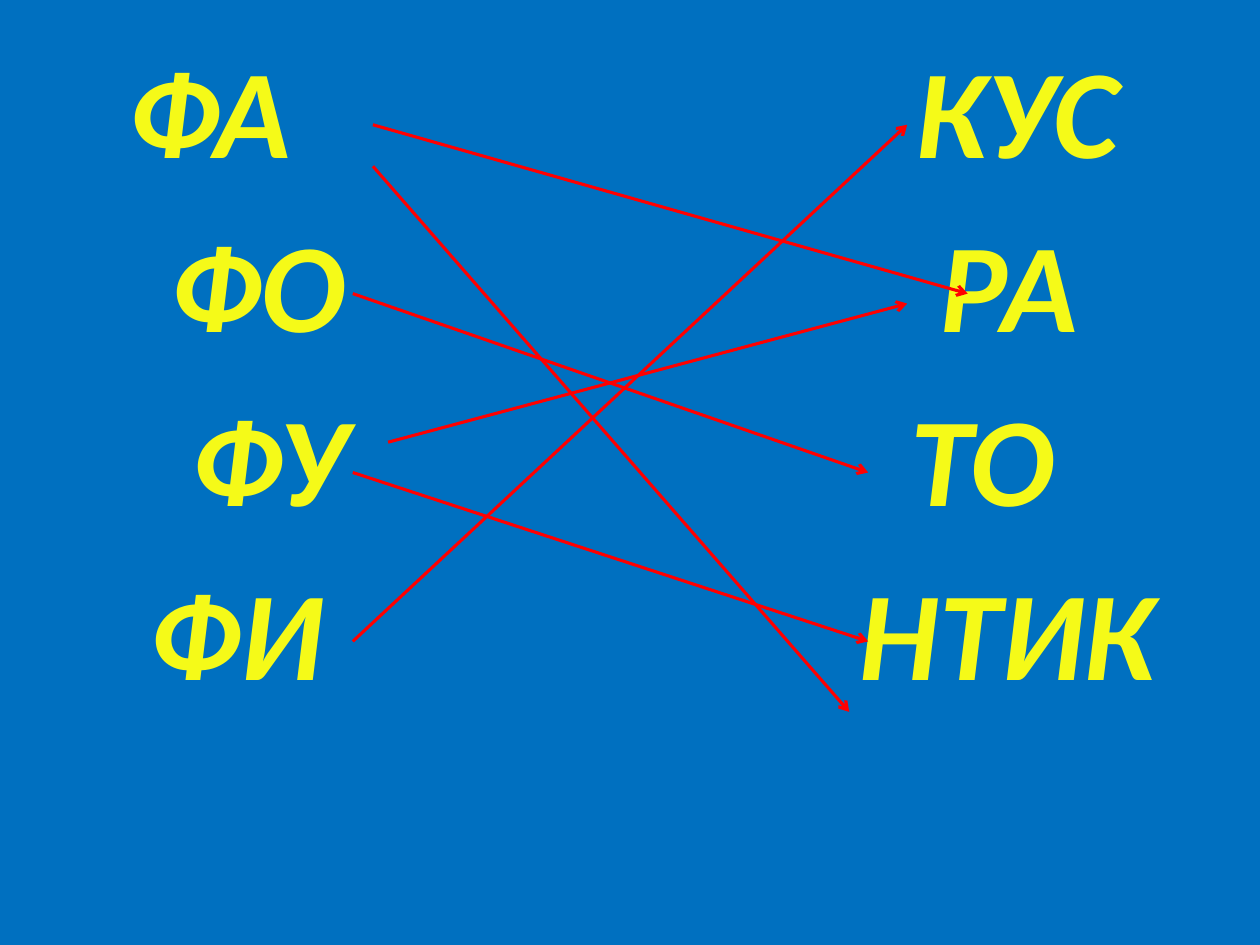
import pptx
import pptx.dml.color
import pptx.enum.shapes
import pptx.enum.text
import pptx.util
from lxml import etree

Pt = pptx.util.Pt
INK = {"back": "0070C0", "text": "F5FA18", "line": "FF0000"}
LEFT = [("ФА", 41), ("ФО", 65), ("ФУ", 77), ("ФИ", 53)]
RIGHT = [("КУС", 71), ("РА", 85), ("ТО", 68), ("НТИК", 39)]
LINKS = [
    ((201.6, 366.5), (518.4, 71.3)),
    ((201.6, 167.8), (496.1, 270)),
    ((221.8, 252.7), (518.4, 173.5)),
    ((201.6, 270), (496.1, 366.5)),
    ((213.1, 95), (485.3, 406.8)),
    ((213.1, 71.3), (553, 167.8)),
]


def rgb(name):
    return pptx.dml.color.RGBColor.from_string(INK[name])


def write(para, text, size=72, color="text", indent=0, gap=0):
    run = para.add_run()
    run.text = text
    font = run.font
    font.name, font.size = "Calibri", Pt(size)
    font.bold = font.italic = True
    font.color.rgb = rgb(color)
    para.alignment = pptx.enum.text.PP_ALIGN.LEFT
    para.space_before = Pt(gap)
    props = para._p.get_or_add_pPr()
    props.set("marL", str(Pt(indent)))
    props.set("indent", "0")
    etree.SubElement(props, pptx.oxml.ns.qn("a:buNone"))


def column(holder, words, box):
    """Fill a placeholder with syllables, each at its own indent."""
    holder.left, holder.top, holder.width, holder.height = map(Pt, box)
    frame = holder.text_frame
    frame.auto_size = pptx.enum.text.MSO_AUTO_SIZE.NONE
    frame.word_wrap = True
    for i, (word, indent) in enumerate(words):
        para = frame.add_paragraph() if i else frame.paragraphs[0]
        write(para, word, indent=indent, gap=13)


def arrow(slide, start, end):
    line = slide.shapes.add_connector(
        pptx.enum.shapes.MSO_CONNECTOR.STRAIGHT, *map(Pt, start + end))
    line.line.color.rgb = rgb("line")
    line.line.width = Pt(1.75)
    qn = pptx.oxml.ns.qn
    etree.SubElement(line.line._get_or_add_ln(), qn("a:tailEnd"), type="arrow")
    etree.SubElement(line._element.spPr, qn("a:effectLst"))


def main():
    deck = pptx.Presentation()
    deck.slide_width, deck.slide_height = Pt(720), Pt(540)
    slide = deck.slides.add_slide(deck.slide_layouts.get_by_name("Two Content"))
    slide.background.fill.solid()
    slide.background.fill.fore_color.rgb = rgb("back")
    title, left, right = list(slide.placeholders)[:3]
    title._element.getparent().remove(title._element)
    column(left, LEFT, (25.2, 15, 420, 499))
    column(right, RIGHT, (445.2, 15, 243, 499))
    for start, end in LINKS:
        arrow(slide, start, end)
    deck.save("out.pptx")


if __name__ == "__main__":
    main()
